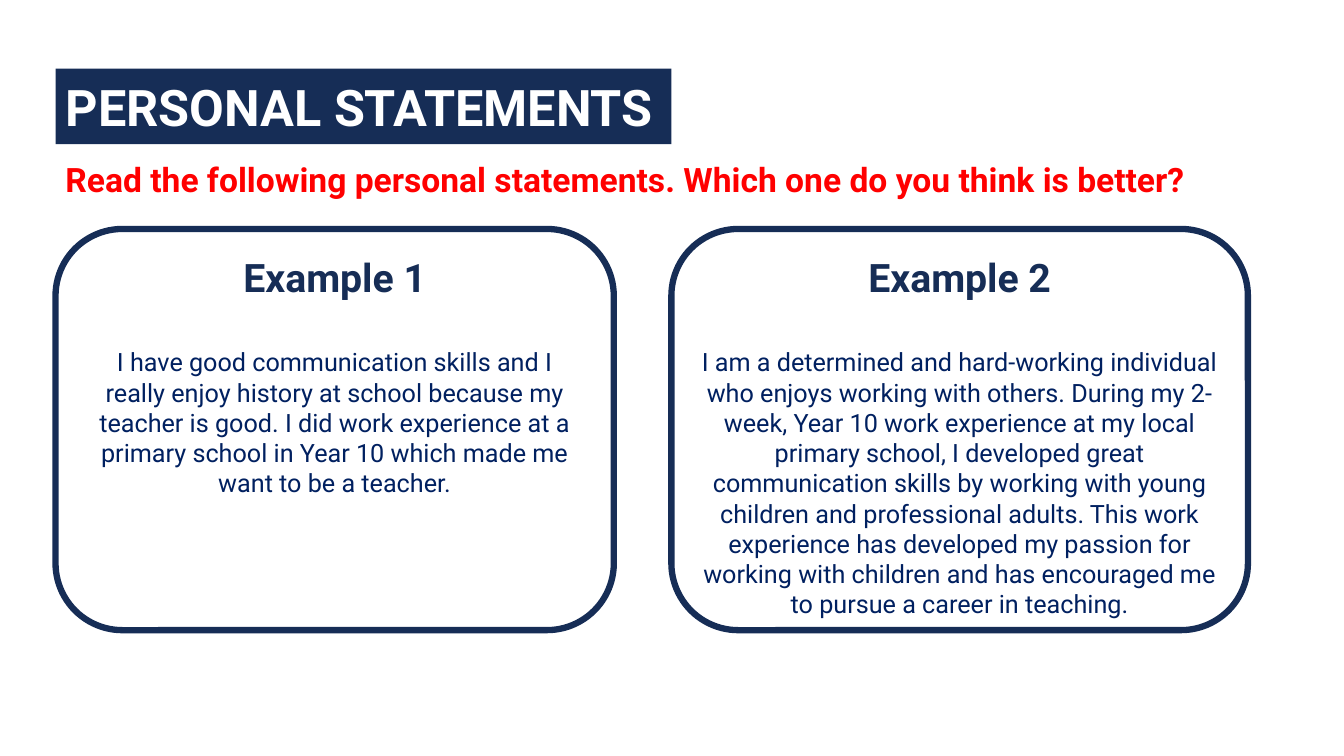
from dataclasses import dataclass

from pptx import Presentation
from pptx.dml.color import RGBColor
from pptx.enum.shapes import MSO_SHAPE
from pptx.enum.text import MSO_ANCHOR, MSO_AUTO_SIZE, PP_ALIGN
from pptx.util import Cm, Pt

TITLE = "PERSONAL STATEMENTS"
QUESTION = "Read the following personal statements. Which one do you think is better?"
# heading, statement, card width in cm
EXAMPLES = [
    ("Example 1",
     "I have good communication skills and I really enjoy history at school "
     "because my teacher is good. I did work experience at a primary school in "
     "Year 10 which made me want to be a teacher.",
     14.07),
    ("Example 2",
     "I am a determined and hard-working individual who enjoys working with "
     "others. During my 2-week, Year 10 work experience at my local primary "
     "school, I developed great communication skills by working with young "
     "children and professional adults. This work experience has developed my "
     "passion for working with children and has encouraged me to pursue a "
     "career in teaching.",
     14.53),
]


@dataclass(frozen=True)
class Theme:
    font: str = "Roboto"
    navy: RGBColor = RGBColor(0x16, 0x2D, 0x56)
    body_blue: RGBColor = RGBColor(0x00, 0x20, 0x60)
    red: RGBColor = RGBColor(0xFF, 0x00, 0x00)
    white: RGBColor = RGBColor(0xFF, 0xFF, 0xFF)
    title_size: Pt = Pt(36)
    heading_size: Pt = Pt(28)
    question_size: Pt = Pt(24)
    body_size: Pt = Pt(18)
    heading_gap: Pt = Pt(33)
    border: Pt = Pt(4.5)


THEME = Theme()
LEFT = 1.4
CONTENT_WIDTH = 30.05
CARD_TOP, CARD_HEIGHT, CARD_GAP = 5.77, 10.11, 1.45


def add_span(para, text, size, color, bold=True, align=PP_ALIGN.LEFT):
    para.alignment = align
    span = para.add_run()
    span.text = text
    span.font.name = THEME.font
    span.font.size = size
    span.font.bold = bold
    span.font.color.rgb = color


def add_title(page):
    title = page.shapes.title
    title.left, title.top = Cm(LEFT), Cm(1.73)
    title.width, title.height = Cm(15.52), Cm(1.9)
    title.fill.solid()
    title.fill.fore_color.rgb = THEME.navy
    frame = title.text_frame
    frame.auto_size = MSO_AUTO_SIZE.NONE
    frame.vertical_anchor = MSO_ANCHOR.MIDDLE
    add_span(frame.paragraphs[0], TITLE, THEME.title_size, THEME.white)


def add_question(page):
    box = page.shapes.add_textbox(Cm(LEFT), Cm(3.89), Cm(CONTENT_WIDTH), Cm(1.27))
    box.text_frame.word_wrap = True
    add_span(box.text_frame.paragraphs[0], QUESTION, THEME.question_size, THEME.red)


def add_card(page, left, width, heading, statement):
    card = page.shapes.add_shape(MSO_SHAPE.ROUNDED_RECTANGLE, Cm(left),
                                 Cm(CARD_TOP), Cm(width), Cm(CARD_HEIGHT))
    card.shadow.inherit = False
    card.fill.background()
    card.line.color.rgb = THEME.navy
    card.line.width = THEME.border
    frame = card.text_frame
    frame.word_wrap = True
    frame.vertical_anchor = MSO_ANCHOR.TOP
    add_span(frame.paragraphs[0], heading, THEME.heading_size, THEME.navy,
             align=PP_ALIGN.CENTER)
    para = frame.add_paragraph()
    para.space_before = THEME.heading_gap
    add_span(para, statement, THEME.body_size, THEME.body_blue, bold=False,
             align=PP_ALIGN.CENTER)


def main():
    deck = Presentation()
    deck.slide_width, deck.slide_height = Cm(33.87), Cm(19.05)
    page = deck.slides.add_slide(deck.slide_layouts[5])
    add_title(page)
    add_question(page)
    left = LEFT
    for heading, statement, width in EXAMPLES:
        add_card(page, left, width, heading, statement)
        left += width + CARD_GAP
    deck.save("out.pptx")


if __name__ == "__main__":
    main()
